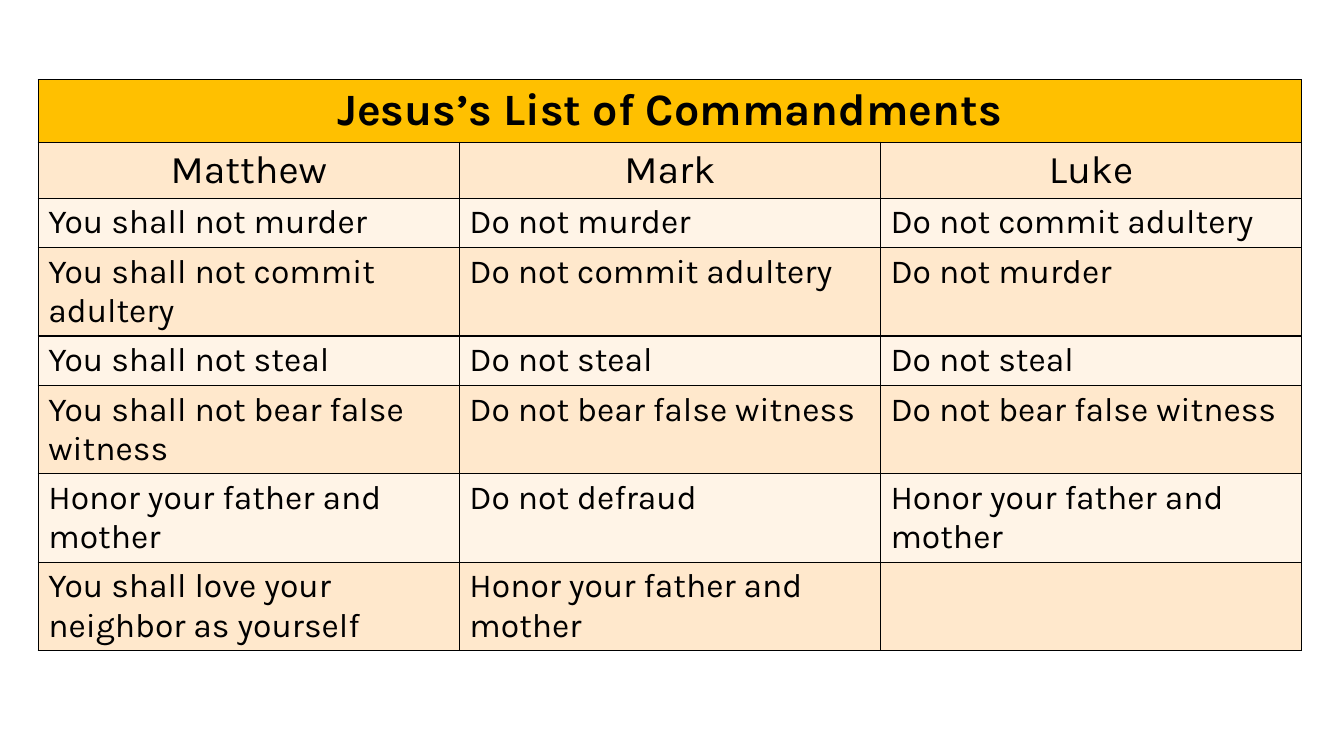
from dataclasses import dataclass

from lxml import etree
from pptx import Presentation
from pptx.dml.color import RGBColor
from pptx.enum.text import PP_ALIGN
from pptx.oxml.ns import qn
from pptx.util import Inches, Pt

LEFT, CENTER = PP_ALIGN.LEFT, PP_ALIGN.CENTER
BLANK_LAYOUT = 6


@dataclass(frozen=True)
class Theme:
    font: str = "Karla"
    text: str = "000000"
    border: str = "000000"
    title_fill: str = "FFC000"
    bands: tuple = ("FFF4E7", "FFE8CC")
    title_size: int = 32
    header_size: int = 28
    body_size: int = 24
    border_width: int = 1


TITLE = "Jesus’s List of Commandments"
GOSPELS = ("Matthew", "Mark", "Luke")
COMMANDMENTS = (
    ("You shall not murder", "Do not murder", "Do not commit adultery"),
    ("You shall not commit adultery", "Do not commit adultery", "Do not murder"),
    ("You shall not steal", "Do not steal", "Do not steal"),
    ("You shall not bear false witness", "Do not bear false witness",
     "Do not bear false witness"),
    ("Honor your father and mother", "Do not defraud",
     "Honor your father and mother"),
    ("You shall love your neighbor as yourself",
     "Honor your father and mother", ""),
)


class SlideBuilder:
    def __init__(self, slide, theme):
        self.slide = slide
        self.theme = theme

    def borders(self, cell):
        tcPr = cell._tc.get_or_add_tcPr()
        for side in ("a:lnL", "a:lnR", "a:lnT", "a:lnB"):
            ln = etree.SubElement(tcPr, qn(side), w=str(Pt(self.theme.border_width)))
            fill = etree.SubElement(ln, qn("a:solidFill"))
            etree.SubElement(fill, qn("a:srgbClr"), val=self.theme.border)

    def cell(self, cell, text, fill, size, align=LEFT, bold=False):
        # Borders must precede the fill in the cell properties
        self.borders(cell)
        cell.fill.solid()
        cell.fill.fore_color.rgb = RGBColor.from_string(fill)
        p = cell.text_frame.paragraphs[0]
        p.text = text
        p.alignment = align
        font = p.font
        if p.runs:
            font = p.runs[0].font
        font.name = self.theme.font
        font.size = Pt(size)
        font.bold = bold
        font.color.rgb = RGBColor.from_string(self.theme.text)

    def table(self, title, headers, rows, left, top, width, height, row_height):
        theme = self.theme
        s = self.slide.shapes.add_table(
            len(rows) + 2, len(headers), left, top, width, height)
        table = s.table

        # Title across all columns
        for c in range(len(headers)):
            self.cell(table.cell(0, c), "" if c else title, theme.title_fill,
                      theme.title_size, CENTER, True)
        table.cell(0, 0).merge(table.cell(0, len(headers) - 1))

        # Column headings
        for c, text in enumerate(headers):
            self.cell(table.cell(1, c), text, theme.bands[1],
                      theme.header_size, CENTER)

        # Banded body rows
        for r, row in enumerate(rows):
            for c, text in enumerate(row):
                self.cell(table.cell(r + 2, c), text, theme.bands[r % 2],
                          theme.body_size)

        # Rows grow to fit their text
        for row in table.rows:
            row.height = row_height
        s.height = height


def main():
    prs = Presentation()
    prs.slide_width, prs.slide_height = Inches(13.33), Inches(7.5)
    slide = prs.slides.add_slide(prs.slide_layouts[BLANK_LAYOUT])

    builder = SlideBuilder(slide, Theme())
    builder.table(TITLE, GOSPELS, COMMANDMENTS, Inches(0.38), Inches(0.79),
                  Inches(12.53), Inches(5.8), Inches(0.41))
    prs.save("out.pptx")


if __name__ == "__main__":
    main()
